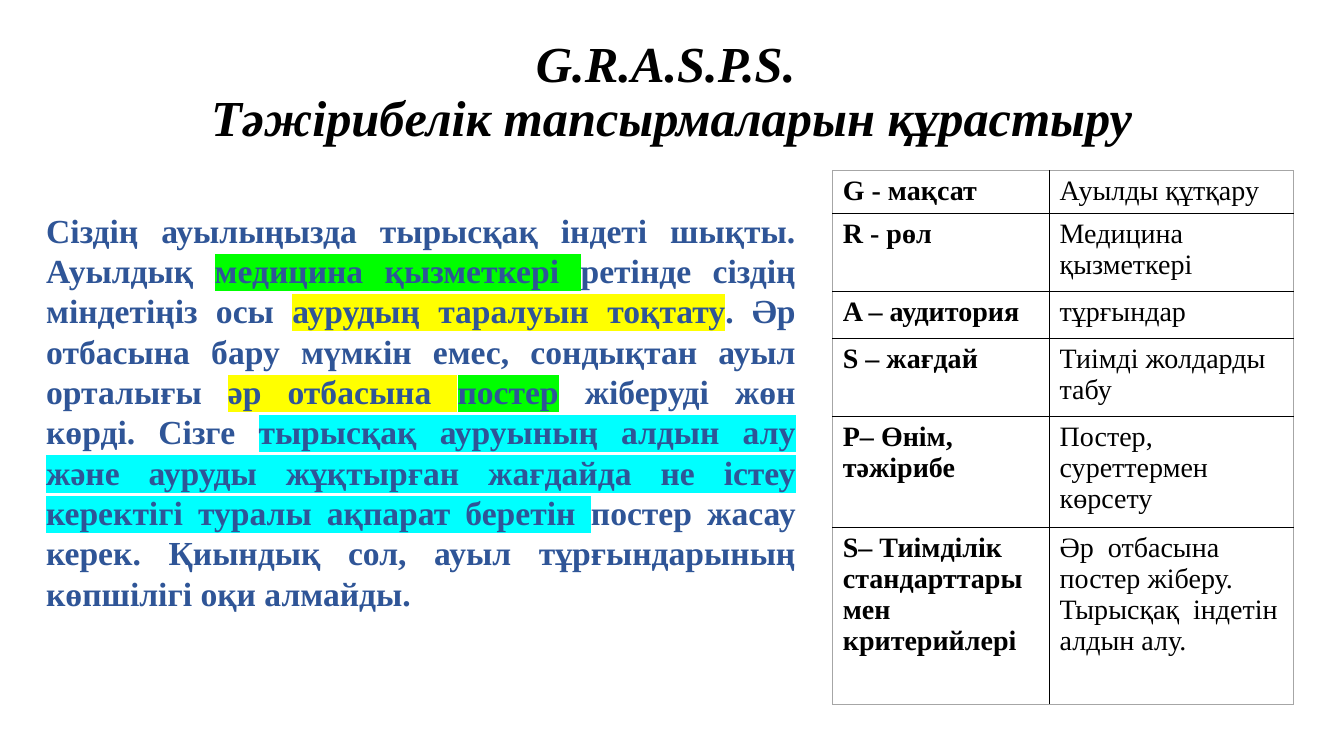
from pptx import Presentation
from pptx import util as u
from pptx.dml.color import RGBColor
from pptx.enum import shapes, text
from pptx.oxml import parse_xml
from pptx.oxml.ns import nsdecls

FONT = "Times New Roman"
COLORS = {
    "black": "000000", "white": "FFFFFF", "blue": "2F5597", "frame": "A6A6A6",
    "green": "00FF00", "yellow": "FFFF00", "cyan": "00FFFF",
}


def set_font(run, size, color, bold=True, italic=False):
    run.font.size = u.Pt(size)
    run.font.bold = bold
    run.font.italic = italic
    run.font.color.rgb = RGBColor.from_string(COLORS[color])
    run.font.name = FONT


def set_borders(cell, sides):
    """Draw cell borders; sides maps L, R, T, B to a color name, in that order."""
    for index, (side, color) in enumerate(sides.items()):
        width = u.Pt(1 if color == "black" else 0.5)
        border = parse_xml(
            f'<a:ln{side} {nsdecls("a")} w="{width}"><a:solidFill>'
            f'<a:srgbClr val="{COLORS[color]}"/></a:solidFill></a:ln{side}>')
        cell._tc.get_or_add_tcPr().insert(index, border)


presentation = Presentation()
presentation.slide_width = u.Inches(13.33)
presentation.slide_height = u.Inches(7.5)
slide = presentation.slides.add_slide(presentation.slide_layouts[6])

# Task description with highlighted phrases
task = [
    ("Сіздің ауылыңызда тырысқақ індеті шықты. Ауылдық ", None),
    ("медицина қызметкері ", "green"),
    ("ретінде сіздің міндетіңіз осы ", None),
    ("аурудың таралуын тоқтату", "yellow"),
    (". Әр отбасына бару мүмкін емес, сондықтан ауыл орталығы ", None),
    ("әр отбасына ", "yellow"),
    ("постер", "green"),
    (" жіберуді жөн көрді. Сізге ", None),
    ("тырысқақ ауруының алдын алу және ауруды жұқтырған жағдайда не істеу "
     "керектігі туралы ақпарат беретін ", "cyan"),
    ("постер жасау керек. Қиындық сол, ауыл тұрғындарының көпшілігі оқи алмайды. ", None),
]
task_box = slide.shapes.add_shape(
    shapes.MSO_SHAPE.RECTANGLE,
    u.Inches(0.36), u.Inches(1.55), u.Inches(7.63), u.Inches(4.61))
task_box.shadow.inherit = False
task_box.fill.background()
task_box.line.color.rgb = RGBColor.from_string(COLORS["white"])
task_box.line.width = u.Pt(0.75)
task_frame = task_box.text_frame
task_frame.word_wrap = True
task_frame.vertical_anchor = text.MSO_ANCHOR.MIDDLE
task_frame.margin_top = u.Inches(0.5)
paragraph = task_frame.paragraphs[0]
paragraph.alignment = text.PP_ALIGN.JUSTIFY
for phrase, highlight in task:
    run = paragraph.add_run()
    run.text = phrase
    set_font(run, 24, "blue")
    if highlight:
        fill = run._r.rPr.find("{*}solidFill")
        fill.addnext(parse_xml(
            f'<a:highlight {nsdecls("a")}><a:srgbClr val="{COLORS[highlight]}"/></a:highlight>'))

# GRASPS table: label, answer, row height
grasps = [
    ("G - мақсат", "Ауылды құтқару", 0.43),
    ("R - рөл", "Медицина қызметкері", 0.77),
    ("A – аудитория", "тұрғындар", 0.47),
    ("S – жағдай", "Тиімді жолдарды табу", 0.77),
    ("P– Өнім, тәжірибе", "Постер,  суреттермен көрсету", 1.1),
    ("S– Тиімділік стандарттары мен критерийлері",
     "Әр  отбасына постер жіберу.  Тырысқақ  індетін алдын алу.", 1.76),
]
table = slide.shapes.add_table(
    len(grasps), 2, u.Inches(8.26), u.Inches(1.69), u.Inches(4.57), u.Inches(5.3)).table
table.first_row = False
table.horz_banding = False
for column, width in zip(table.columns, (2.15, 2.42)):
    column.width = u.Inches(width)
last_row = len(grasps) - 1
for row, (label, answer, height) in enumerate(grasps):
    table.rows[row].height = u.Inches(height)
    for column, content in enumerate((label, answer)):
        cell = table.cell(row, column)
        cell.text_frame.text = content
        set_font(cell.text_frame.paragraphs[0].runs[0], 20, "black", bold=column == 0)
        cell.fill.background()
        set_borders(cell, {
            "L": "frame" if column == 0 else "black",
            "R": "frame" if column == 1 else "black",
            "T": "frame" if row == 0 else "black",
            "B": "frame" if row == last_row else "black",
        })

# Title
title_box = slide.shapes.add_textbox(0, u.Inches(0.3), u.Inches(13.33), u.Inches(1.25))
title_frame = title_box.text_frame
title_frame.word_wrap = True
title_frame.vertical_anchor = text.MSO_ANCHOR.MIDDLE
paragraph = title_frame.paragraphs[0]
paragraph.text = "G.R.A.S.P.S. \vТәжірибелік тапсырмаларын құрастыру"
paragraph.alignment = text.PP_ALIGN.CENTER
paragraph.line_spacing = 0.9
for run in paragraph.runs:
    set_font(run, 36, "black", italic=True)

presentation.save("out.pptx")
